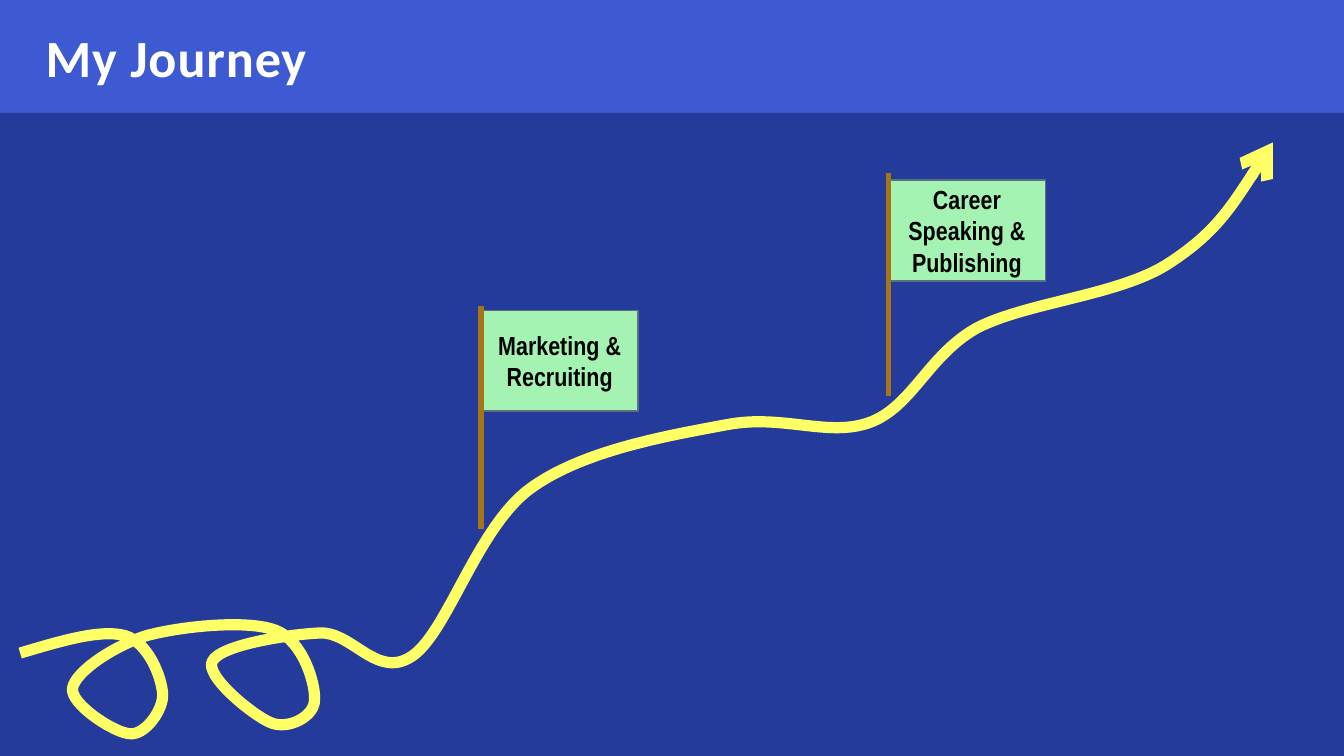
from lxml import etree
from pptx import Presentation
from pptx import util as u
from pptx.dml.color import RGBColor
from pptx.enum import shapes, text
from pptx.oxml import ns

PX = 4572  # EMU per px, 200 px to the inch
WIDTH, HEIGHT, HEADER = 2000, 1125, 168

HEADER_BLUE = RGBColor(0x3E, 0x5A, 0xD2)
BODY_BLUE = RGBColor(0x24, 0x3B, 0x9C)
WHITE = RGBColor(0xFF, 0xFF, 0xFF)
BLACK = RGBColor(0, 0, 0)
YELLOW = RGBColor(0xFF, 0xFF, 0x66)
GREEN = RGBColor(0xA5, 0xF3, 0xB2)
SLATE = RGBColor(0x5D, 0x70, 0x80)
BROWN = RGBColor(0xA5, 0x76, 0x17)

ROAD_START = (30, 972)
# Each row is one curve: two control points, then the end point.
ROAD_CURVES = [
    [(90, 954), (150, 936), (186, 946)],
    [(220, 956), (240, 1006), (242, 1032)],
    [(244, 1056), (216, 1094), (194, 1092)],
    [(172, 1092), (104, 1048), (108, 1024)],
    [(112, 1000), (168, 962), (218, 946)],
    [(270, 932), (368, 922), (410, 938)],
    [(452, 954), (470, 1020), (468, 1042)],
    [(468, 1066), (430, 1086), (404, 1076)],
    [(378, 1066), (304, 1006), (316, 984)],
    [(328, 960), (428, 944), (478, 942)],
    [(526, 942), (562, 1012), (614, 976)],
    [(666, 940), (710, 786), (788, 728)],
    [(866, 670), (996, 648), (1082, 632)],
    [(1166, 616), (1234, 652), (1296, 628)],
    [(1358, 604), (1382, 528), (1454, 488)],
    [(1528, 450), (1662, 440), (1736, 394)],
    [(1808, 348), (1852, 280), (1894, 212)],
]


def emu(*lengths):
    return [u.Emu(n * PX) for n in lengths]


def add_rect(shape_tree, box, fill):
    s = shape_tree.add_shape(shapes.MSO_SHAPE.RECTANGLE, *emu(*box))
    s.shadow.inherit = False
    s.fill.solid()
    s.fill.fore_color.rgb = fill
    s.line.fill.background()
    return s


def add_run(p, words, font, size, color):
    r = p.add_run()
    r.text = words
    r.font.name, r.font.size, r.font.bold = font, u.Pt(size), True
    r.font.color.rgb = color
    return r


def add_backdrop(slide, x, y, w, h):
    add_rect(slide.shapes, (x, y, w, HEADER), HEADER_BLUE)
    add_rect(slide.shapes, (x, y + HEADER, w, h - HEADER), BODY_BLUE)


def add_title(slide, x, y, w, h, words):
    tf = slide.shapes.add_textbox(*emu(x, y, w, h)).text_frame
    tf.word_wrap = True
    p = tf.paragraphs[0]
    p.line_spacing = 0.8
    r = add_run(p, words, "Calibri", 28, WHITE)
    r.font._element.set("spc", "50")


def add_road(slide, start, curves):
    """Draw smooth joined curves that end in an arrowhead."""
    builder = slide.shapes.build_freeform(*start, scale=PX)
    builder.add_line_segments([pt for c in curves for pt in c], close=False)
    s = builder.convert_to_shape()
    s.shadow.inherit = False
    s.fill.background()
    s.line.color.rgb, s.line.width = YELLOW, u.Pt(6)
    etree.SubElement(s.line._get_or_add_ln(), ns.qn("a:tailEnd"), type="arrow")

    # The builder makes straight segments; join every three into a Bézier.
    segments = list(s._element.iter(ns.qn("a:lnTo")))
    for i in range(0, len(segments), 3):
        curve = etree.Element(ns.qn("a:cubicBezTo"))
        segments[i].addprevious(curve)
        for segment in segments[i:i + 3]:
            curve.append(segment[0])
            segment.getparent().remove(segment)


def add_flag(slide, x, y, w, h, words, rise):
    """Hang a labelled flag on a pole that starts `rise` px above it."""
    s = add_rect(slide.shapes, (x, y, w, h), GREEN)
    s.line.color.rgb, s.line.width = SLATE, u.Pt(0.85)
    tf = s.text_frame
    tf.word_wrap = True
    tf.vertical_anchor = text.MSO_ANCHOR.MIDDLE
    p = tf.paragraphs[0]
    p.alignment = text.PP_ALIGN.CENTER
    add_run(p, words, "Arial Narrow", 14, BLACK)

    top = y - rise
    pole = slide.shapes.add_connector(
        shapes.MSO_CONNECTOR.STRAIGHT, *emu(x, top, x, top + 332))
    pole.line.color.rgb, pole.line.width = BROWN, u.Pt(3)
    etree.SubElement(pole._element.spPr, ns.qn("a:effectLst"))


def main():
    prs = Presentation()
    prs.slide_width, prs.slide_height = emu(WIDTH, HEIGHT)
    slide = prs.slides.add_slide(prs.slide_layouts[6])
    add_backdrop(slide, 0, 0, WIDTH, HEIGHT)
    add_title(slide, 48, 46, 1864, 134, "My Journey")
    add_road(slide, ROAD_START, ROAD_CURVES)
    add_flag(slide, 716, 462, 234, 150, "Marketing & Recruiting", rise=6)
    add_flag(slide, 1322, 268, 234, 150, "Career Speaking & Publishing", rise=10)
    prs.save("out.pptx")


if __name__ == "__main__":
    main()
